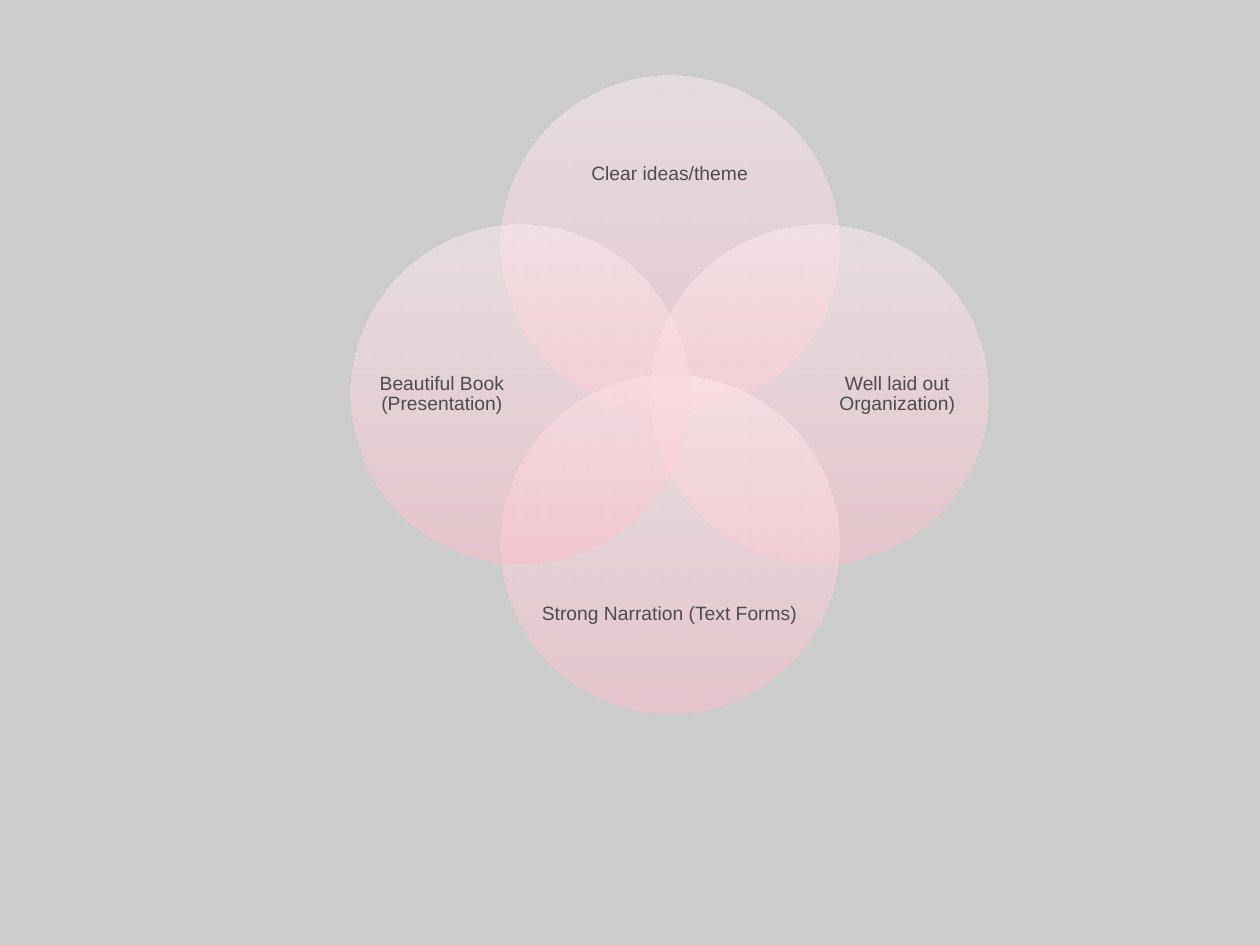
from lxml import etree
from pptx import Presentation
from pptx.dml.color import RGBColor
from pptx.enum.shapes import MSO_SHAPE
from pptx.enum.text import MSO_ANCHOR, PP_ALIGN
from pptx.oxml.ns import qn
from pptx.util import Cm, Pt

OVAL = MSO_SHAPE.OVAL
MIDDLE = MSO_ANCHOR.MIDDLE
CENTER = PP_ALIGN.CENTER

QUALITIES = [
    ("Clear ideas/theme", (0, -1)),
    ("Well laid out Organization)", (1, 0)),
    ("Strong Narration (Text Forms)", (0, 1)),
    ("Beautiful Book (Presentation)", (-1, 0)),
]

THEME = {
    "background": "CCCCCC",
    "text": "4C4C4C",
    "font": "Arial",
    "size": 11,
    "space_after": 3.85,
    "gradient": [(0, "FFBDCD"), (35, "FFD1DB"), (100, "FFEEF1")],
    "opacity": 50,
}

CENTER_X, CENTER_Y = 13.5, 7.95
DIAMETER = 6.83
CIRCLE_REACH = 3.02
LABEL_REACH_X, LABEL_REACH_Y = 4.59, 4.43
LABEL_LONG = 5.26
LABEL_HEIGHT, LABEL_WIDTH = 2.16, 2.62


def centered_box(x, y, width, height):
    return Cm(x - width / 2), Cm(y - height / 2), Cm(width), Cm(height)


def fill_with_gradient(circle):
    circle.fill.gradient()
    circle.fill.gradient_angle = 90
    stops = circle._element.spPr.find(qn("a:gradFill")).find(qn("a:gsLst"))
    for stop in list(stops):
        stops.remove(stop)
    for position, color in THEME["gradient"]:
        stop = etree.SubElement(stops, qn("a:gs"), pos=str(position * 1000))
        tint = etree.SubElement(stop, qn("a:srgbClr"), val=color)
        etree.SubElement(tint, qn("a:alpha"), val=str(THEME["opacity"] * 1000))


def add_circle(slide, dx, dy):
    circle = slide.shapes.add_shape(OVAL, *centered_box(
        CENTER_X + dx * CIRCLE_REACH, CENTER_Y + dy * CIRCLE_REACH, DIAMETER, DIAMETER))
    circle.shadow.inherit = False
    circle.line.fill.background()
    fill_with_gradient(circle)


def add_label(slide, quality, dx, dy):
    width, height = (LABEL_WIDTH, LABEL_LONG) if dx else (LABEL_LONG, LABEL_HEIGHT)
    label = slide.shapes.add_textbox(*centered_box(
        CENTER_X + dx * LABEL_REACH_X, CENTER_Y + dy * LABEL_REACH_Y, width, height))
    frame = label.text_frame
    frame.word_wrap = True
    frame.vertical_anchor = MIDDLE
    frame.margin_left = frame.margin_right = frame.margin_top = frame.margin_bottom = 0
    paragraph = frame.paragraphs[0]
    paragraph.alignment = CENTER
    paragraph.line_spacing = 0.9
    paragraph.space_after = Pt(THEME["space_after"])
    run = paragraph.add_run()
    run.text = quality
    run.font.name = THEME["font"]
    run.font.size = Pt(THEME["size"])
    run.font.color.rgb = RGBColor.from_string(THEME["text"])


def main():
    deck = Presentation()
    deck.slide_width, deck.slide_height = Cm(25.4), Cm(19.05)
    slide = deck.slides.add_slide(deck.slide_layouts[6])
    slide.background.fill.solid()
    slide.background.fill.fore_color.rgb = RGBColor.from_string(THEME["background"])
    for quality, (dx, dy) in QUALITIES:
        add_circle(slide, dx, dy)
        add_label(slide, quality, dx, dy)
    deck.save("out.pptx")


if __name__ == "__main__":
    main()
